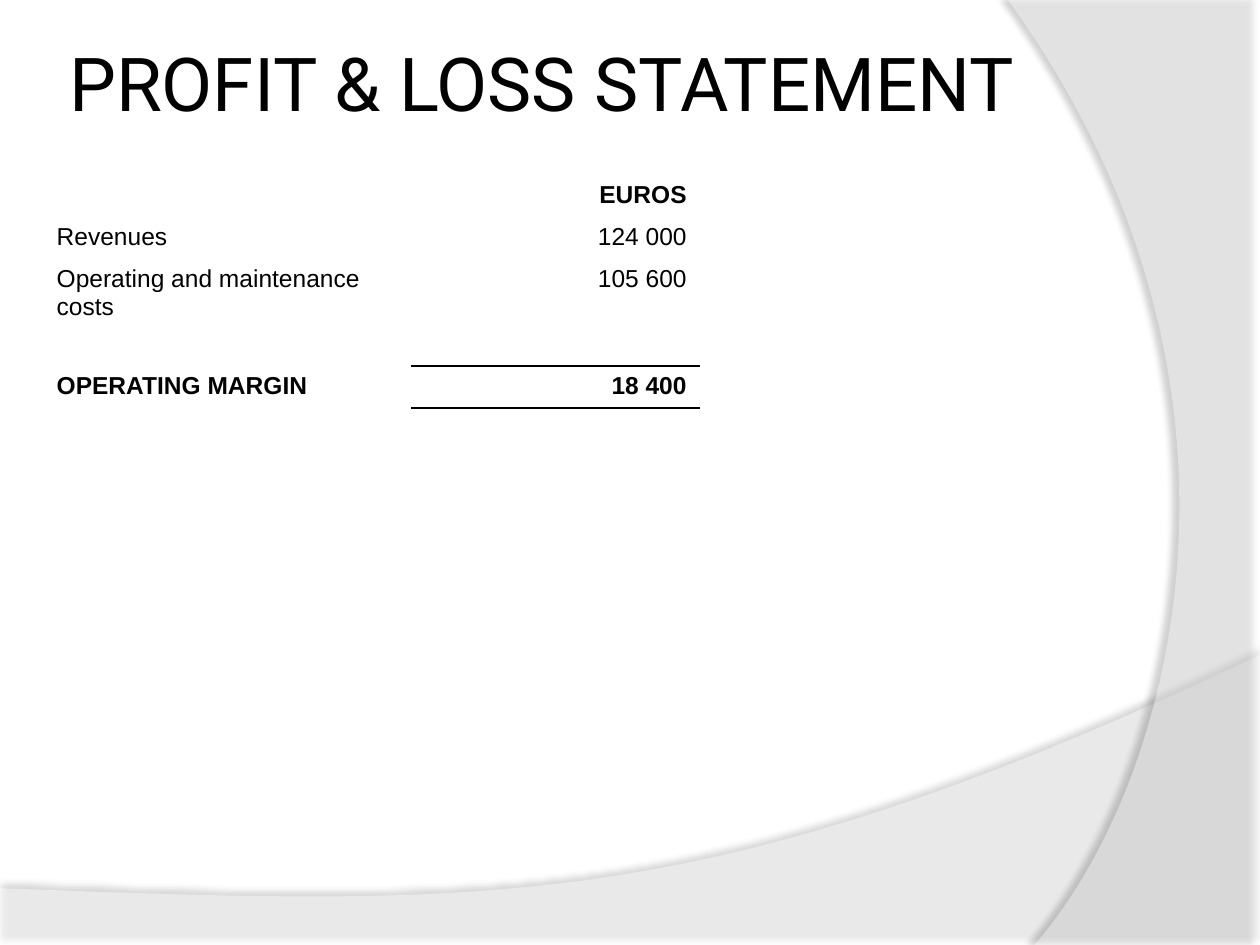
from dataclasses import dataclass
from typing import NamedTuple

from lxml.etree import SubElement
from pptx import Presentation
from pptx.dml.color import RGBColor
from pptx.enum.text import MSO_ANCHOR as Anchor, PP_ALIGN as Align
from pptx.oxml import parse_xml
from pptx.oxml.ns import nsdecls, qn
from pptx.util import Emu, Inches, Pt

BLACK = RGBColor(0, 0, 0)
WHITE = RGBColor(255, 255, 255)
SLIDE_WIDTH, SLIDE_HEIGHT = Inches(10), Inches(7.5)
CURVE_STEPS = 60


class Point(NamedTuple):
    x: float
    y: float


@dataclass(frozen=True)
class Wave:
    corners: tuple[Point, ...]
    curve: tuple[Point, Point, Point, Point]
    opacity: int
    shadow_opacity: int
    shadow_distance: float
    shadow_angle: int


@dataclass(frozen=True)
class StatementRow:
    label: str
    amount: str
    height: float
    bold: bool = False
    borders: tuple[str, ...] = ()


WAVES = (
    Wave((Point(0, 1), Point(1, 1)),
         (Point(1, 0.693), Point(0.559, 0.972), Point(0.391, 0.959), Point(0, 0.94)),
         45, 35, 3.5, 270),
    Wave((Point(1, 0), Point(1, 1)),
         (Point(0.821, 1), Point(0.935, 0.825), Point(1.018, 0.4), Point(0.8, 0)),
         40, 45, 4, 180),
)
STATEMENT = (
    StatementRow("", "EUROS", 0.33, bold=True),
    StatementRow("Revenues", "124 000", 0.33),
    StatementRow("Operating and maintenance costs", "105 600", 0.56),
    StatementRow("", "", 0.28, borders=("lnB",)),
    StatementRow("OPERATING MARGIN", "18 400", 0.33, bold=True, borders=("lnT", "lnB")),
)
COLUMN_WIDTHS = (2.92, 2.28)


def place(point: Point) -> tuple[int, int]:
    return round(point.x * SLIDE_WIDTH), round(point.y * SLIDE_HEIGHT)


def bezier(curve: tuple[Point, Point, Point, Point], t: float) -> Point:
    weights = ((1 - t) ** 3, 3 * t * (1 - t) ** 2, 3 * t * t * (1 - t), t ** 3)
    return Point(sum(w * p.x for w, p in zip(weights, curve)),
                 sum(w * p.y for w, p in zip(weights, curve)))


def draw_wave(slide, wave: Wave) -> None:
    curve = [bezier(wave.curve, step / CURVE_STEPS) for step in range(CURVE_STEPS + 1)]
    start, *rest = [place(point) for point in (*wave.corners, *curve)]
    builder = slide.shapes.build_freeform(*start)
    builder.add_line_segments(rest, close=True)
    shape = builder.convert_to_shape()
    shape.fill.solid()
    shape.fill.fore_color.rgb = WHITE
    shape.line.fill.background()
    shape.shadow.inherit = False
    properties = shape.element.spPr
    color = properties.find(qn("a:solidFill")).find(qn("a:srgbClr"))
    SubElement(color, qn("a:alpha"), val=str(wave.opacity * 1000))
    properties.find(qn("a:effectLst")).append(parse_xml(
        f'<a:outerShdw {nsdecls("a")} blurRad="{Pt(4)}" dist="{Pt(wave.shadow_distance)}" '
        f'dir="{wave.shadow_angle * 60000}" rotWithShape="0"><a:srgbClr val="{BLACK}">'
        f'<a:alpha val="{wave.shadow_opacity * 1000}"/></a:srgbClr></a:outerShdw>'))


def add_run(paragraph, text: str, font: str, size: float, bold: bool = False) -> None:
    run = paragraph.add_run()
    run.text = text
    run.font.name = font
    run.font.size = Pt(size)
    run.font.bold = bold
    run.font.color.rgb = BLACK


def draw_title(slide, text: str) -> None:
    box = slide.shapes.add_textbox(Inches(0.5), Inches(0.25), Inches(9), Inches(0.8))
    frame = box.text_frame
    frame.word_wrap = True
    frame.vertical_anchor = Anchor.MIDDLE
    frame.margin_left = frame.margin_right = Inches(0.05)
    frame.margin_top = frame.margin_bottom = Inches(0.05)
    add_run(frame.paragraphs[0], text, "Roboto", 42.5)


def fill_cell(cell, text: str, bold: bool, align: Align) -> None:
    cell.fill.background()
    paragraph = cell.text_frame.paragraphs[0]
    paragraph.alignment = align
    if text:
        add_run(paragraph, text, "Arial", 14, bold)
    else:
        SubElement(paragraph._p, qn("a:endParaRPr"), sz="1000")


def add_borders(cell, borders: tuple[str, ...]) -> None:
    for index, border in enumerate(borders):
        cell._tc.get_or_add_tcPr().insert(index, parse_xml(
            f'<a:{border} {nsdecls("a")} w="{Pt(1)}"><a:solidFill>'
            f'<a:srgbClr val="{BLACK}"/></a:solidFill></a:{border}>'))


def draw_statement(slide, rows: tuple[StatementRow, ...]) -> None:
    frame = slide.shapes.add_table(
        len(rows), len(COLUMN_WIDTHS), Inches(0.35), Inches(1.39),
        Inches(sum(COLUMN_WIDTHS)), Inches(sum(row.height for row in rows)))
    table = frame.table
    table.first_row = table.horz_banding = False
    for column, width in zip(table.columns, COLUMN_WIDTHS):
        column.width = Inches(width)
    for index, row in enumerate(rows):
        table.rows[index].height = Inches(row.height)
        label, amount = table.rows[index].cells
        fill_cell(label, row.label, row.bold, Align.LEFT)
        fill_cell(amount, row.amount, row.bold, Align.RIGHT)
        add_borders(amount, row.borders)


def main() -> None:
    presentation = Presentation()
    presentation.slide_width = Emu(SLIDE_WIDTH)
    presentation.slide_height = Emu(SLIDE_HEIGHT)
    slide = presentation.slides.add_slide(presentation.slide_layouts[6])
    for wave in WAVES:
        draw_wave(slide, wave)
    draw_title(slide, "PROFIT & LOSS STATEMENT")
    draw_statement(slide, STATEMENT)
    presentation.save("out.pptx")


if __name__ == "__main__":
    main()
